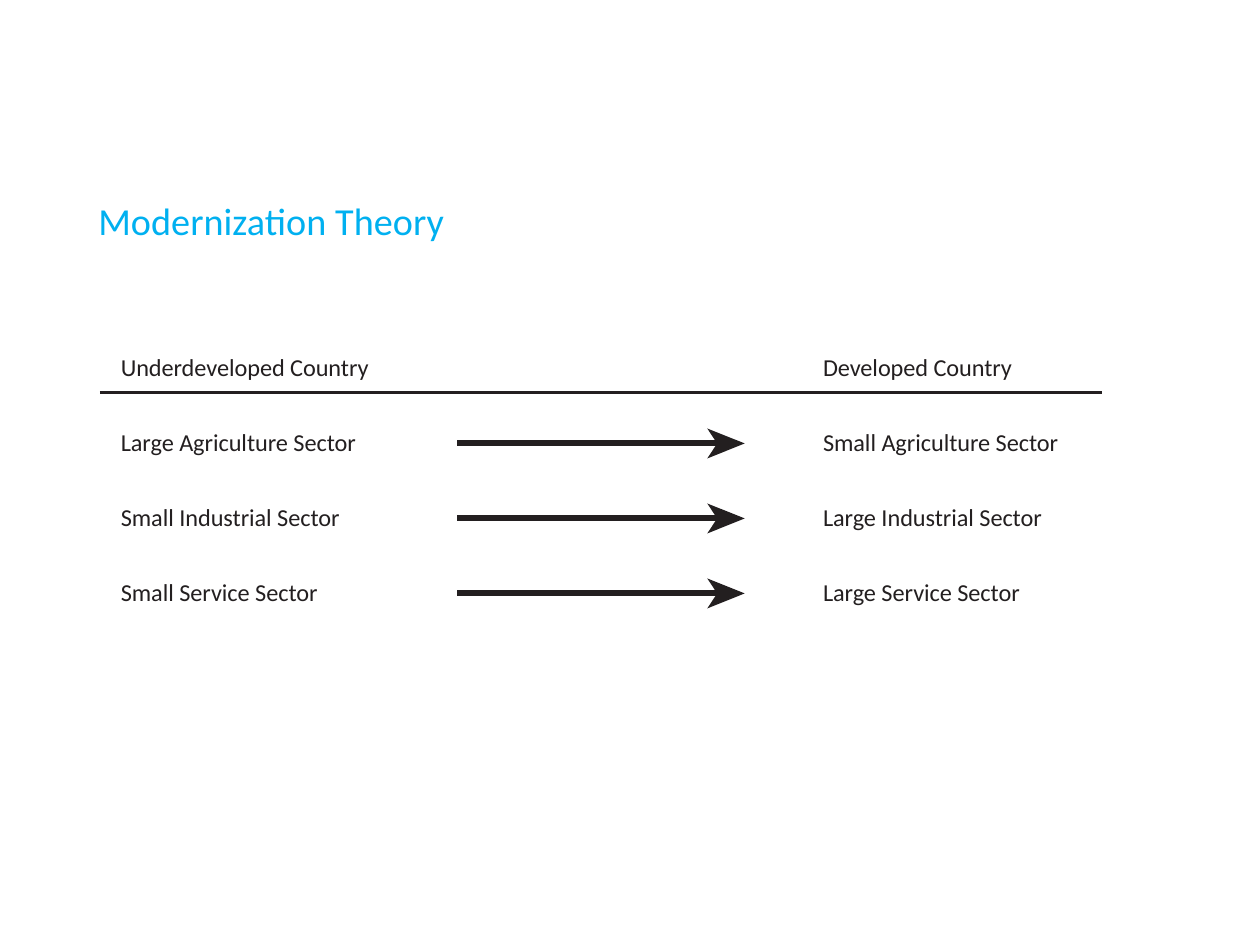
import pptx
import pptx.dml.color
import pptx.enum.shapes
import pptx.enum.text
import pptx.util
from lxml import etree

COLORS = {"background": "FFFFFF", "title": "00B0F0", "ink": "231F20"}
COLUMNS = {"title": 0.38, "rule": 0.4, "before": 0.47, "arrow": 1.83, "after": 3.28}
FIRST_ROW, ROW_HEIGHT = 1.39, 0.3
TITLE_ROW = -2.03
SECTOR_ROWS = [
    ("Underdeveloped Country", "Developed Country"),
    ("Large Agriculture Sector", "Small Agriculture Sector"),
    ("Small Industrial Sector", "Large Industrial Sector"),
    ("Small Service Sector", "Large Service Sector"),
]


def inches(*values):
    return [pptx.util.Inches(value) for value in values]


def color(name):
    return pptx.dml.color.RGBColor.from_string(COLORS[name])


class TheorySlide:
    font = "Calibri"

    def __init__(self, presentation):
        self.slide = presentation.slides.add_slide(presentation.slide_layouts[6])
        background = self.slide.background.fill
        background.solid()
        background.fore_color.rgb = color("background")

    def row_top(self, row):
        return FIRST_ROW + row * ROW_HEIGHT

    def text(self, words, column, row, width=1.14, height=0.13, size=7,
             ink="ink", inset=0.02, space=1.2):
        shape = self.slide.shapes.add_textbox(
            *inches(COLUMNS[column], self.row_top(row), width, height))
        frame = shape.text_frame
        frame.word_wrap = True
        frame.auto_size = pptx.enum.text.MSO_AUTO_SIZE.SHAPE_TO_FIT_TEXT
        frame.margin_left = frame.margin_right = frame.margin_bottom = 0
        frame.margin_top = pptx.util.Inches(inset)
        paragraph = frame.paragraphs[0]
        paragraph.space_before = pptx.util.Pt(space)
        paragraph._p.get_or_add_pPr().set("marL", str(pptx.util.Pt(1)))
        run = paragraph.add_run()
        run.text = words
        run.font.name = self.font
        run.font.size = pptx.util.Pt(size)
        run.font.color.rgb = color(ink)

    def line(self, shapes, column, row, length, weight):
        left, top = COLUMNS[column], self.row_top(row)
        connector = shapes.add_connector(
            pptx.enum.shapes.MSO_CONNECTOR.STRAIGHT,
            *inches(left, top, left + length, top))
        connector.line.color.rgb = color("ink")
        connector.line.width = pptx.util.Pt(weight)
        etree.SubElement(connector._element.spPr, pptx.oxml.ns.qn("a:effectLst"))

    def arrow(self, row, shaft=1.04, half_height=0.06):
        """Draw a shaft with a notched head, grouped, centred on the given row."""
        group = self.slide.shapes.add_group_shape()
        self.line(group.shapes, "arrow", row, shaft, 1.8)
        notch, middle = COLUMNS["arrow"] + shaft, self.row_top(row)
        back, tip = notch - 0.04, notch + 0.11
        builder = group.shapes.build_freeform(*inches(back, middle - half_height))
        builder.add_line_segments([
            inches(notch, middle),
            inches(back, middle + half_height),
            inches(tip, middle),
        ], close=True)
        head = builder.convert_to_shape()
        head.shadow.inherit = False
        head.fill.solid()
        head.fill.fore_color.rgb = color("ink")
        head.line.fill.background()


def main():
    presentation = pptx.Presentation()
    presentation.slide_width = pptx.util.Pt(363)
    presentation.slide_height = pptx.util.Pt(272.5)
    theory = TheorySlide(presentation)
    theory.text("Modernization Theory", "title", TITLE_ROW, width=1.43, height=0.2,
                size=11, ink="title", inset=0.01, space=0.9)
    theory.line(theory.slide.shapes, "rule", 0.6, 4.01, 0.9)
    for row, (before, after) in enumerate(SECTOR_ROWS):
        theory.text(before, "before", row)
        theory.text(after, "after", row)
        if row:
            theory.arrow(row + 0.28)
    presentation.save("out.pptx")


if __name__ == "__main__":
    main()
